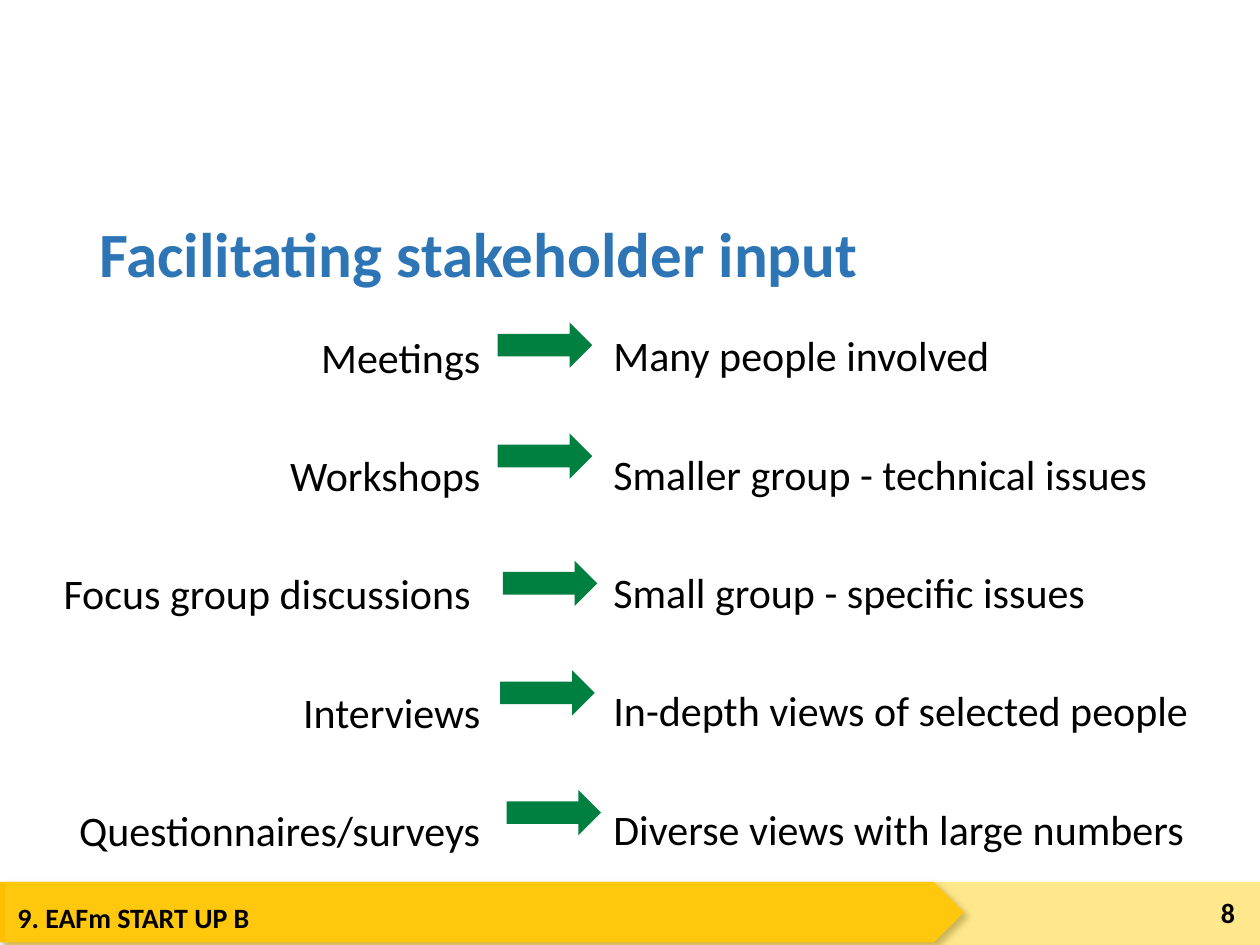
from lxml.etree import SubElement as Sub
from pptx import Presentation
from pptx.dml.color import RGBColor
from pptx.enum.shapes import MSO_SHAPE as Form
from pptx.enum.text import MSO_ANCHOR as Anchor, PP_ALIGN as Align
from pptx.oxml.ns import qn
from pptx.util import Inches, Pt

deck = Presentation()
deck.slide_width, deck.slide_height = Inches(10), Inches(7.5)
wide, high = deck.slide_width / 100, deck.slide_height / 100
slide = deck.slides.add_slide(deck.slide_layouts[6])


def block(form, box, color):
    x, y, w, h = box
    shape = slide.shapes.add_shape(
        form, int(x * wide), int(y * high), int(w * wide), int(h * high))
    shape.shadow.inherit = False
    shape.fill.solid()
    shape.fill.fore_color.rgb = RGBColor.from_string(color)
    shape.line.fill.background()
    return shape


def write(box, lines, size, color="000000", bold=False, align=Align.LEFT,
          anchor=Anchor.TOP, space=1.0, gap=0):
    x, y, w, h = box
    frame = slide.shapes.add_textbox(
        int(x * wide), int(y * high), int(w * wide), int(h * high)).text_frame
    frame.word_wrap = True
    frame.vertical_anchor = anchor
    for i, line in enumerate(lines):
        para = frame.paragraphs[0] if i == 0 else frame.add_paragraph()
        para.alignment = align
        para.line_spacing = space
        para.space_before = Pt(gap if i else 0)
        run = para.add_run()
        run.text = line
        run.font.name = "Calibri"
        run.font.size = Pt(size)
        run.font.bold = bold
        run.font.color.rgb = RGBColor.from_string(color)


flag = block(Form.PENTAGON, (0, 93.33, 76.5, 6.4), "FFC000")
glow = flag._element.spPr.find(qn("a:effectLst"))
shade = Sub(glow, qn("a:outerShdw"), blurRad=str(Pt(4)), dist=str(Pt(3)),
            dir="2700000", algn="tl", rotWithShape="0")
tint = Sub(shade, qn("a:srgbClr"), val="000000")
Sub(tint, qn("a:alpha"), val="40000")

band = block(Form.RECTANGLE, (0.4, 93.33, 99.6, 7.07), "FFD01B")
tint = band._element.spPr.find(qn("a:solidFill")).find(qn("a:srgbClr"))
Sub(tint, qn("a:alpha"), val="50000")

write((0.4, 94.67, 73.5, 5.47), ["9. EAFm START UP B"], 16, bold=True)
write((6.9, 21.73, 86.2, 10.93), ["Facilitating stakeholder input"], 36,
      "2E75B6", True, anchor=Anchor.MIDDLE, space=0.9)
write((91.7, 93.87, 7.3, 5.33), ["8"], 16, bold=True, align=Align.RIGHT,
      anchor=Anchor.MIDDLE)

rows = [
    ("Meetings", "Many people involved", 39.5, 34.13),
    ("Workshops", "Smaller group - technical issues", 39.5, 45.87),
    ("Focus group discussions ", "Small group - specific issues", 39.9, 59.33),
    ("Interviews", "In-depth views of selected people", 39.7, 70.93),
    ("Questionnaires/surveys", "Diverse views with large numbers", 40.2, 83.6),
]
tools, uses, lefts, tops = zip(*rows)
write((-9.3, 29.07, 48.4, 70.27), tools, 24, align=Align.RIGHT, space=2.0, gap=10)
write((47.7, 28.93, 60.8, 63.73), uses, 24, space=2.0, gap=10)
for left, top in zip(lefts, tops):
    block(Form.RIGHT_ARROW, (left, top, 7.5, 4.8), "008040")

deck.save("out.pptx")
